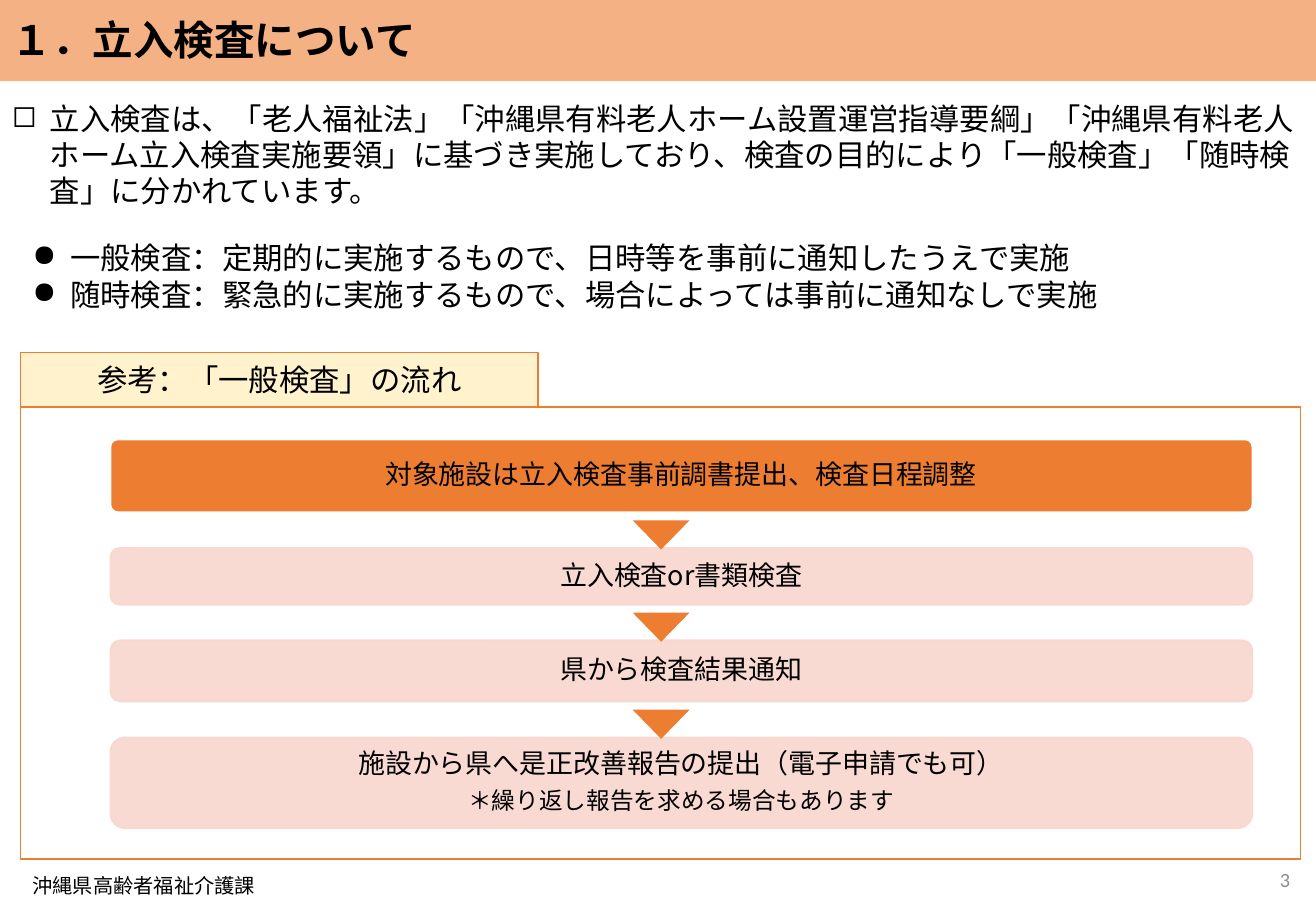
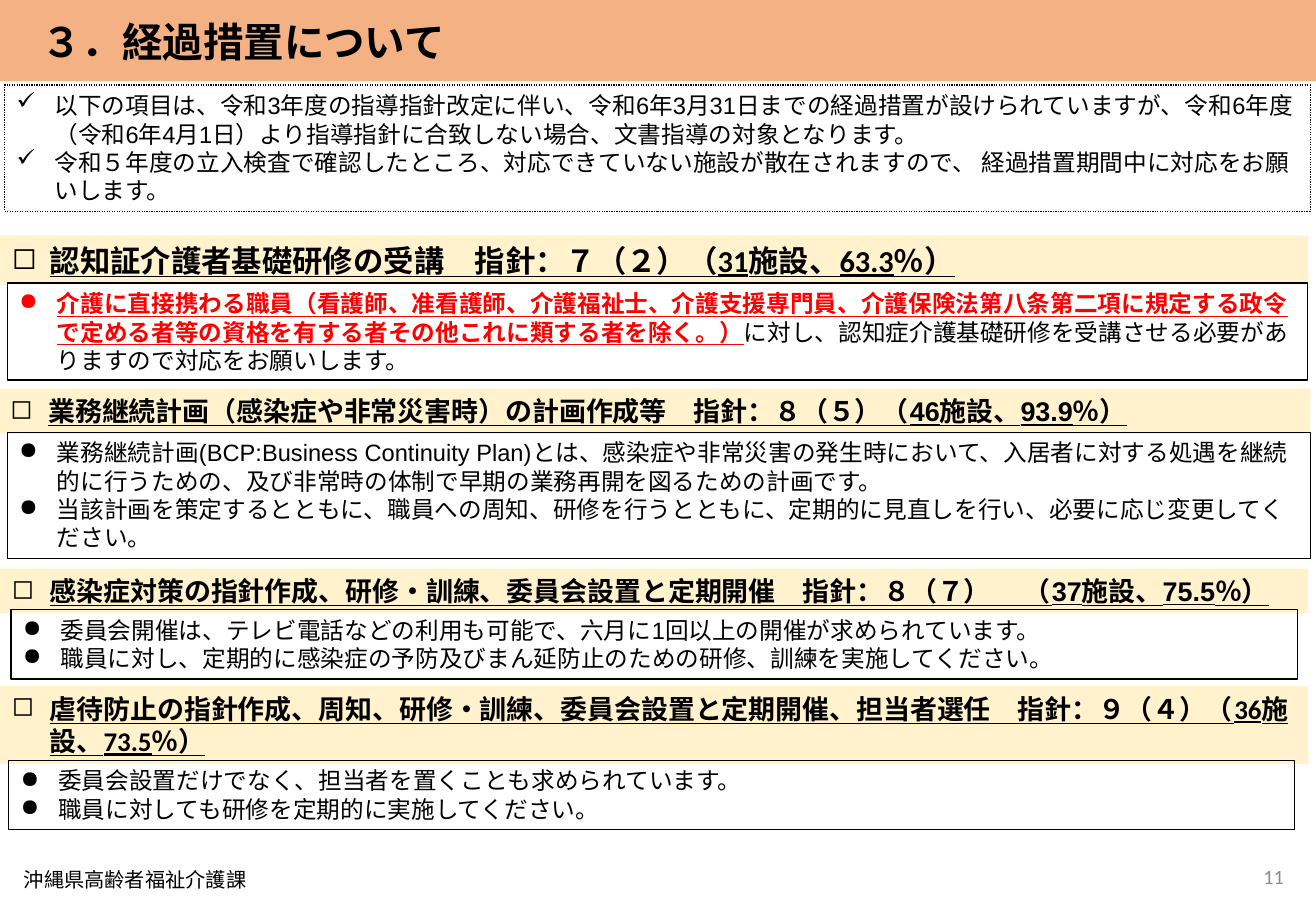
from lxml.etree import SubElement
from pptx import Presentation
from pptx.dml.color import RGBColor
from pptx.enum.dml import MSO_LINE
from pptx.enum.shapes import MSO_SHAPE
from pptx.enum.text import MSO_ANCHOR, PP_ALIGN
from pptx.oxml.ns import qn
from pptx.util import Cm, Pt

ORANGE, PEACH, PINK, CREAM = "ED7D31", "F4B183", "F8D7CE", "FFF2CC"
BLACK, GREY, RED, WHITE = "000000", "8C8C8C", "FF0000", "FFFFFF"
JAPANESE = "Noto Sans CJK JP"
PAGE_WIDTH = 27.52
CENTRED = {"alignment": PP_ALIGN.CENTER}
STEP = {"alignment": PP_ALIGN.CENTER, "line_spacing": 0.9, "space_after": Pt(5.6)}
STEP_FRAME = {"margin_left": Cm(0.1), "margin_right": Cm(0.1),
              "margin_top": Cm(0.1), "margin_bottom": Cm(0.1)}
TOP = {"vertical_anchor": MSO_ANCHOR.TOP}
HEADING = {"bold": True, "underline": True}


def colour(fill, code):
    fill.solid()
    fill.fore_color.rgb = RGBColor.from_string(code)


def add_part(slide, box, paragraphs=(), kind=MSO_SHAPE.RECTANGLE, fill=None, line=None,
             width=1, size=18, font="Arial", frame={}, layout={}, bullet=None, style={}, ink=BLACK):
    place = [Cm(length) for length in box]
    if kind is None:
        part = slide.shapes.add_textbox(*place)
    else:
        part = slide.shapes.add_shape(kind, *place)
        part.shadow.inherit = False
        if fill:
            colour(part.fill, fill)
        else:
            part.fill.background()
        if line:
            colour(part.line.fill, line)
            part.line.width = Pt(width)
        else:
            part.line.fill.background()
    text = part.text_frame
    for name, value in {"word_wrap": True, "vertical_anchor": MSO_ANCHOR.MIDDLE, **frame}.items():
        setattr(text, name, value)
    for number, runs in enumerate(paragraphs):
        paragraph = text.add_paragraph() if number else text.paragraphs[0]
        for name, value in {"alignment": PP_ALIGN.LEFT, **layout}.items():
            setattr(paragraph, name, value)
        if bullet:
            properties = paragraph._p.get_or_add_pPr()
            properties.set("marL", str(Cm(0.79)))
            properties.set("indent", str(-Cm(0.79)))
            SubElement(properties, qn("a:buChar")).set("char", bullet)
        for words, run_ink, run_style in [(runs, ink, style)] if isinstance(runs, str) else runs:
            run = paragraph.add_run()
            run.text = words
            for name, value in {"size": Pt(size), "name": font, **run_style}.items():
                setattr(run.font, name, value)
            colour(run.font.fill, run_ink)
            SubElement(run._r.get_or_add_rPr(), qn("a:ea")).set("typeface", JAPANESE)
    return part


deck = Presentation()
deck.slide_width, deck.slide_height = Cm(PAGE_WIDTH), Cm(19.05)

pages = []
for title, title_left, title_top, office_left, office_top, number, number_left, number_top in [
    ("１．立入検査について", 0, 0.2, 0.43, 18.01, "3", 21.03, 17.88),
    ("３．経過措置について", 0.61, 0.23, 0.25, 17.88, "11", 20.9, 17.81),
]:
    page = deck.slides.add_slide(deck.slide_layouts[6])
    add_part(page, (0, 0, PAGE_WIDTH, 1.7), fill=PEACH)
    add_part(page, (title_left, title_top, 23.6, 1.28), [title], None, size=24,
             frame=TOP, style={"bold": True})
    add_part(page, (office_left, office_top, 9.3, 1.02), ["沖縄県高齢者福祉介護課"], None,
             size=12, font="Calibri")
    add_part(page, (number_left, number_top, 6.2, 1.02), [number], None, size=12,
             font="Calibri", layout={"alignment": PP_ALIGN.RIGHT}, ink=GREY)
    pages.append(page)
inspection, transition = pages

add_part(inspection, (0, 1.96, 27.4, 2.57), [
    "立入検査は、「老人福祉法」「沖縄県有料老人ホーム設置運営指導要綱」「沖縄県有料老人ホーム立入検査実施要領」"
    "に基づき実施しており、検査の目的により「一般検査」「随時検査」に分かれています。",
], None, frame=TOP, bullet="◻")
add_part(inspection, (0.43, 4.88, 26.77, 1.8), [
    "一般検査：定期的に実施するもので、日時等を事前に通知したうえで実施",
    "随時検査：緊急的に実施するもので、場合によっては事前に通知なしで実施",
], None, frame=TOP, bullet="●")
add_part(inspection, (0.43, 8.51, 26.77, 9.45), line=ORANGE)
add_part(inspection, (0.43, 7.37, 10.82, 1.14), ["参考：「一般検査」の流れ"],
         fill=CREAM, line=ORANGE, font="Calibri", layout=CENTRED)

first_step_top = 9.19
for top, height, words, note in [
    (first_step_top, 1.52, "対象施設は立入検査事前調書提出、検査日程調整", None),
    (11.46, 1.19, "立入検査or書類検査", None),
    (13.39, 1.28, "県から検査結果通知", None),
    (15.42, 1.9, "施設から県へ是正改善報告の提出（電子申請でも可）", "＊繰り返し報告を求める場合もあります"),
]:
    is_first = top == first_step_top
    lines = [words]
    if note:
        lines.append([(note, BLACK, {"size": Pt(14)})])
    step = add_part(inspection, (2.31, top, 23.88, height), lines, MSO_SHAPE.ROUNDED_RECTANGLE,
                    fill=ORANGE if is_first else PINK, line=WHITE if is_first else PINK,
                    size=16, font=JAPANESE, frame=STEP_FRAME, layout=STEP)
    step.adjustments[0] = 0.1 if is_first else 0.16
    if not is_first:
        for tone in step.element.spPr.iter(qn("a:srgbClr")):
            SubElement(tone, qn("a:alpha")).set("val", "90000")
        arrow = add_part(inspection, (13.23, top - 0.58, 1.19, 0.61),
                         kind=MSO_SHAPE.ISOSCELES_TRIANGLE, fill=ORANGE)
        arrow.rotation = 180

notice = add_part(transition, (0.1, 1.78, 27.3, 2.64), [
    "以下の項目は、令和3年度の指導指針改定に伴い、令和6年3月31日までの経過措置が設けられていますが、"
    "令和6年度（令和6年4月1日）より指導指針に合致しない場合、文書指導の対象となります。",
    "令和５年度の立入検査で確認したところ、対応できていない施設が散在されますので、 経過措置期間中に対応をお願いします。",
], line=BLACK, width=0.75, size=14, frame=TOP, bullet="✓")
notice.line.dash_style = MSO_LINE.ROUND_DOT

for heading, heading_box, heading_size, heading_font, details, details_box, details_font in [
    ("認知証介護者基礎研修の受講　指針：７（２）（31施設、63.3％）",
     (0, 4.93, 27.36, 1.02), 18, "Calibri",
     [[("介護に直接携わる職員（看護師、准看護師、介護福祉士、介護支援専門員、介護保険法第八条第二項に規定する政令で"
        "定める者等の資格を有する者その他これに類する者を除く。）", RED, HEADING),
       ("に対し、認知症介護基礎研修を受講させる必要がありますので対応をお願いします。", BLACK, {})]],
     (0.15, 5.92, 27.2, 2.03), "Arial"),
    ("業務継続計画（感染症や非常災害時）の計画作成等　指針：８（５）（46施設、93.9％）",
     (-0.03, 8.13, 27.43, 0.94), 16, "Arial",
     ["業務継続計画(BCP:Business Continuity Plan)とは、感染症や非常災害の発生時において、入居者に対する処遇を"
      "継続的に行うための、及び非常時の体制で早期の業務再開を図るための計画です。",
      "当該計画を策定するとともに、職員への周知、研修を行うとともに、定期的に見直しを行い、必要に応じ変更してください。"],
     (0.15, 9.04, 27.25, 2.64), "Arial"),
    ("感染症対策の指針作成、研修・訓練、委員会設置と定期開催　指針：８（７）　 （37施設、75.5％）",
     (0, 11.89, 27.36, 0.94), 16, "Arial",
     ["委員会開催は、テレビ電話などの利用も可能で、六月に1回以上の開催が求められています。",
      "職員に対し、定期的に感染症の予防及びまん延防止のための研修、訓練を実施してください。"],
     (0.23, 12.75, 26.9, 1.45), "Arial"),
    ("虐待防止の指針作成、周知、研修・訓練、委員会設置と定期開催、担当者選任　指針：９（４）（36施設、73.5％）",
     (0, 14.35, 27.36, 1.63), 16, "Calibri",
     ["委員会設置だけでなく、担当者を置くことも求められています。",
      "職員に対しても研修を定期的に実施してください。"],
     (0.18, 15.9, 26.9, 1.45), "Calibri"),
]:
    add_part(transition, heading_box, [heading], fill=CREAM, size=heading_size,
             font=heading_font, frame=TOP, bullet="◻", style=HEADING)
    add_part(transition, details_box, details, line=BLACK, width=0.75, size=14,
             font=details_font, frame=TOP, bullet="●")

deck.save("out.pptx")
